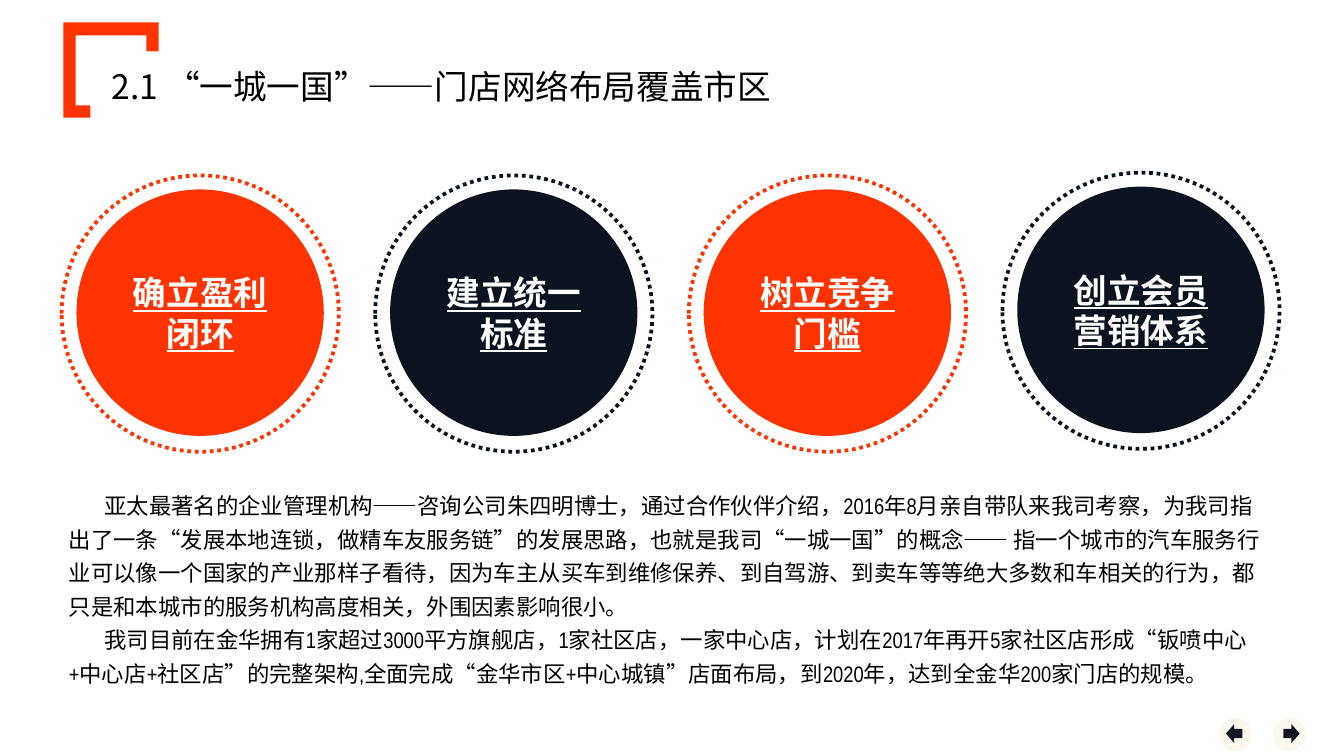
from dataclasses import dataclass

from pptx import Presentation
from pptx.dml.color import RGBColor
from pptx.enum.dml import MSO_LINE
from pptx.enum.shapes import MSO_SHAPE
from pptx.enum.text import MSO_ANCHOR, MSO_AUTO_SIZE, PP_ALIGN
from pptx.oxml.ns import qn
from pptx.util import Pt


@dataclass(frozen=True)
class Theme:
    orange = RGBColor(0xFF, 0x33, 0x00)
    navy = RGBColor(0x0A, 0x13, 0x1F)
    cream = RGBColor(0xFC, 0xF8, 0xED)
    arrow = RGBColor(0x13, 0x14, 0x26)
    white = RGBColor(0xFF, 0xFF, 0xFF)
    black = RGBColor(0, 0, 0)
    cjk = "Noto Sans CJK SC"
    heading = 18
    body = 12


T = Theme()


def add_shape(kind, x, y, w, h, fill=None):
    """Add a shape, lengths in points, with no line or shadow."""
    sp = s.shapes.add_shape(kind, Pt(x), Pt(y), Pt(w), Pt(h))
    sp.shadow.inherit = False
    sp.line.fill.background()
    if fill is None:
        sp.fill.background()
    else:
        sp.fill.solid()
        sp.fill.fore_color.rgb = fill
    return sp


def add_run(p, text, size, color, latin, strong=False):
    """Add a run; strong means bold and underlined."""
    r = p.add_run()
    r.text = text
    r.font.size = Pt(size)
    r.font.color.rgb = color
    r.font.bold = r.font.underline = strong
    r.font.name = latin
    ea = r.font._element.makeelement(qn("a:ea"), {"typeface": T.cjk})
    r.font._element.find(qn("a:latin")).addnext(ea)


prs = Presentation()
prs.slide_width, prs.slide_height = Pt(720), Pt(405)
s = prs.slides.add_slide(prs.slide_layouts[5])

# Title and its corner bracket
points = [(34, 12), (85, 12), (85, 27.5), (78.5, 27.5), (78.5, 19),
          (40.5, 19), (40.5, 56.5), (48.5, 56.5), (48.5, 63), (34, 63)]
corners = [(Pt(x), Pt(y)) for x, y in points]
builder = s.shapes.build_freeform(*corners[0], scale=1.0)
builder.add_line_segments(corners[1:], close=True)
bracket = builder.convert_to_shape()
bracket.shadow.inherit = False
bracket.fill.solid()
bracket.fill.fore_color.rgb = T.orange
bracket.line.fill.background()

title = s.shapes.title
title.left, title.top, title.width, title.height = Pt(18), Pt(34.5), Pt(437), Pt(42)
tf = title.text_frame
tf.auto_size = MSO_AUTO_SIZE.NONE
tf.vertical_anchor = MSO_ANCHOR.MIDDLE
tf.margin_left = tf.margin_right = Pt(5)
tf.margin_top, tf.margin_bottom = 0, Pt(19)
p = tf.paragraphs[0]
p.alignment = PP_ALIGN.CENTER
add_run(p, "2.1 “一城一国”——门店网络布局覆盖市区", T.heading, T.black, T.cjk)

# Four goals, each a disc in a dotted ring; the last sits slightly higher
goals = [
    ("确立盈利闭环", T.orange, 101.5),
    ("建立统一标准", T.navy, 101.5),
    ("树立竞争门槛", T.orange, 101.5),
    ("创立会员营销体系", T.navy, 100),
]
for i, (text, color, top) in enumerate(goals):
    left = 41 + 168 * i
    disc = add_shape(MSO_SHAPE.OVAL, left, top, 132.5, 132, color)
    tf = disc.text_frame
    tf.word_wrap = True
    tf.vertical_anchor = MSO_ANCHOR.MIDDLE
    tf.margin_left = tf.margin_right = Pt(7.9)
    p = tf.paragraphs[0]
    p.alignment = PP_ALIGN.CENTER
    add_run(p, text, T.heading, T.white, "Calibri", strong=True)

    ring = add_shape(MSO_SHAPE.OVAL, left - 8, top - 7.5, 148.5, 148)
    ring.line.color.rgb = color
    ring.line.width = Pt(2)
    ring.line.dash_style = MSO_LINE.ROUND_DOT

# Body text
paragraphs = [
    "亚太最著名的企业管理机构——咨询公司朱四明博士，通过合作伙伴介绍，2016年8月亲自带队来"
    "我司考察，为我司指出了一条“发展本地连锁，做精车友服务链”的发展思路，也就是我司“一城一国”"
    "的概念—— 指一个城市的汽车服务行业可以像一个国家的产业那样子看待，因为车主从买车到维修保养、"
    "到自驾游、到卖车等等绝大多数和车相关的行为，都只是和本城市的服务机构高度相关，外围因素影响很小。",
    "我司目前在金华拥有1家超过3000平方旗舰店，1家社区店，一家中心店，计划在2017年再开5家社区店"
    "形成“钣喷中心+中心店+社区店”的完整架构,全面完成“金华市区+中心城镇”店面布局，到2020年，"
    "达到全金华200家门店的规模。",
]
tf = s.shapes.add_textbox(Pt(29), Pt(256.5), Pt(661.5), Pt(109.5)).text_frame
tf.word_wrap = True
tf.margin_left = tf.margin_right = Pt(7.9)
for i, text in enumerate(paragraphs):
    p = tf.add_paragraph() if i else tf.paragraphs[0]
    p.line_spacing = Pt(18)
    pPr = p._p.get_or_add_pPr()
    pPr.set("marL", "0")
    pPr.set("indent", str(Pt(19)))
    add_run(p, text, T.body, T.black, "Arial Narrow")

# Back and forward buttons
for kind, button_x, arrow_x in [(MSO_SHAPE.LEFT_ARROW, 653, 656.75),
                                (MSO_SHAPE.RIGHT_ARROW, 682, 687.5)]:
    add_shape(MSO_SHAPE.OVAL, button_x, 384.5, 17.5, 18, T.cream)
    add_shape(kind, arrow_x, 388, 8.75, 10, T.arrow)

prs.save("out.pptx")
